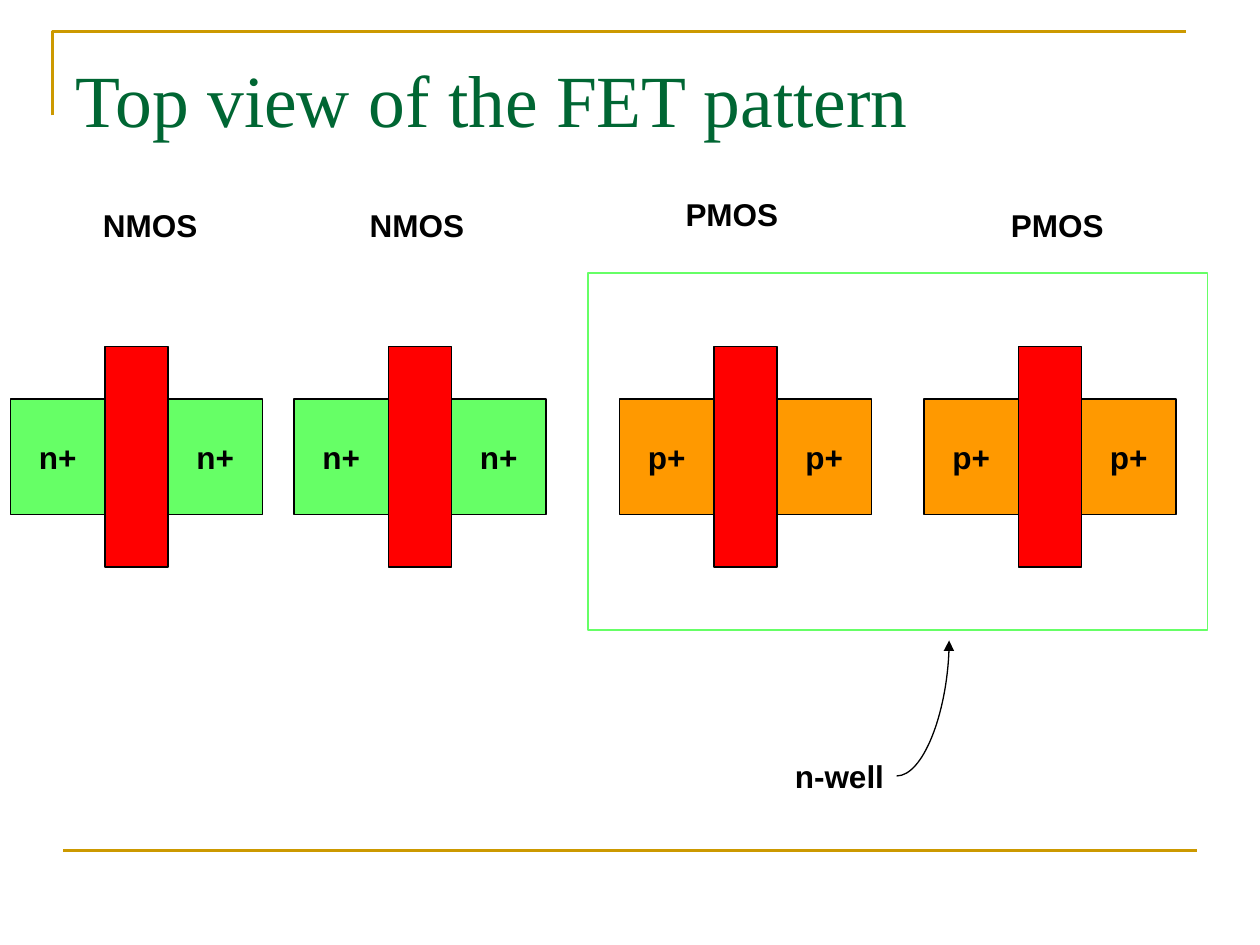
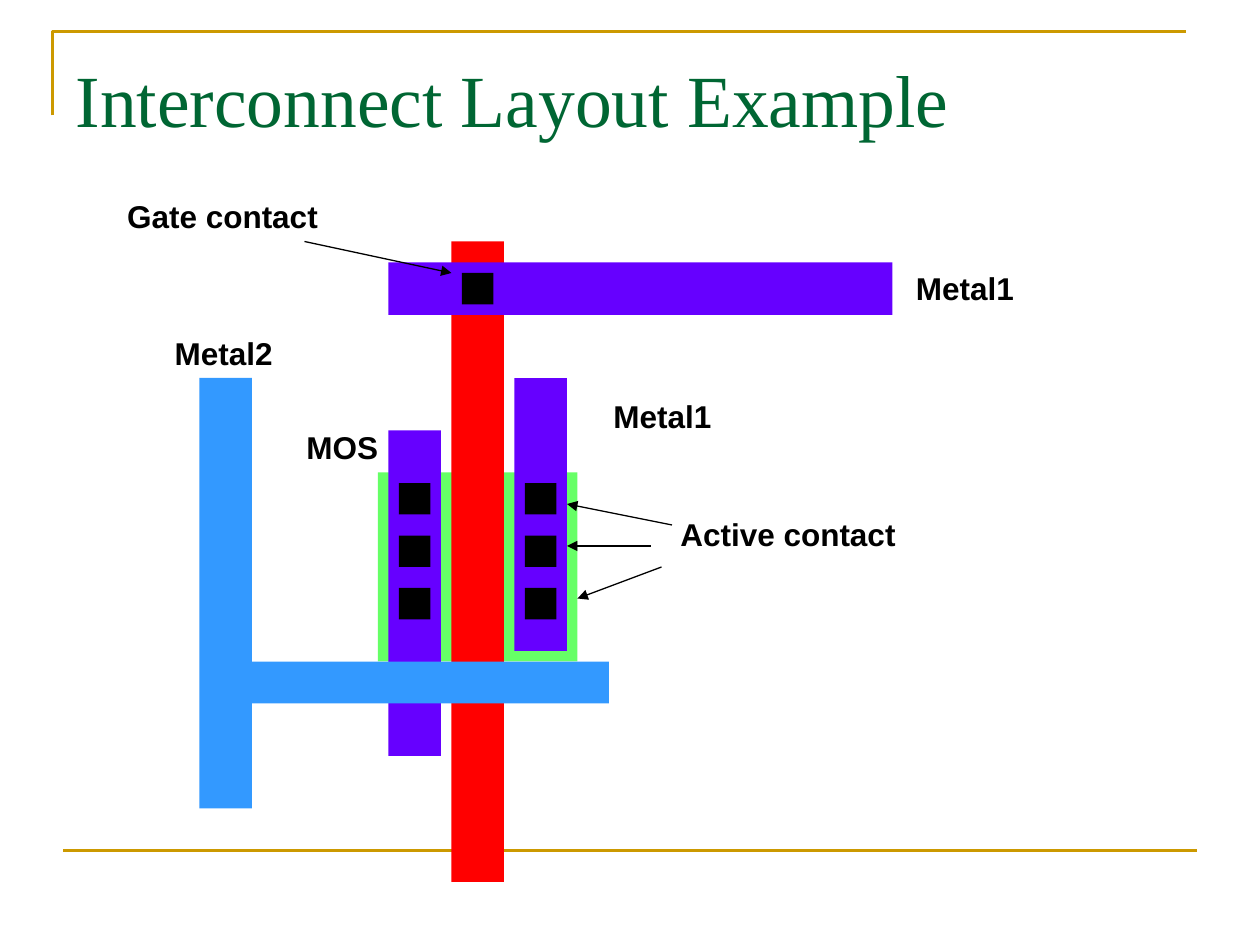
from lxml.etree import SubElement
from pptx import Presentation
from pptx.dml.color import RGBColor
from pptx.enum.shapes import MSO_CONNECTOR as CONN, MSO_SHAPE as SHAPE
from pptx.enum.text import MSO_ANCHOR as ANCHOR, MSO_AUTO_SIZE as AUTO, PP_ALIGN as ALIGN
from pptx.oxml.ns import qn
from pptx.util import Pt

PX = 7620  # EMU in one px, 120 px to the inch

BLACK = RGBColor(0x00, 0x00, 0x00)
GOLD = RGBColor(0xCC, 0x99, 0x00)
TITLE_GREEN = RGBColor(0x00, 0x66, 0x33)
GREEN = RGBColor(0x66, 0xFF, 0x66)
RED = RGBColor(0xFF, 0x00, 0x00)
ORANGE = RGBColor(0xFF, 0x99, 0x00)
VIOLET = RGBColor(0x66, 0x00, 0xFF)
BLUE = RGBColor(0x33, 0x99, 0xFF)

RIGHT_SIDE = 3


def px(*lengths):
    return [n * PX for n in lengths]


class Deck:
    title_font, text_font = "Times New Roman", "Arial"
    title_size, text_size = Pt(42), Pt(18)
    thin, medium = Pt(0.75), Pt(1.5)

    def __init__(self):
        self.prs = Presentation()
        self.prs.slide_width, self.prs.slide_height = px(1200, 900)
        self.s = None

    def new_slide(self, title):
        self.s = self.prs.slides.add_slide(self.prs.slide_layouts[5])
        self.frame()
        self.title(title)

    def frame(self):
        """Draw the gold corner at the top and the gold rule at the bottom."""
        builder = self.s.shapes.build_freeform(50, 110, scale=PX)
        builder.add_line_segments([(50, 30), (1130, 30)], close=False)
        corner = builder.convert_to_shape()
        corner.shadow.inherit = False
        corner.fill.background()
        corner.line.color.rgb = GOLD
        corner.line.width = self.medium
        self.line((60, 810), (1140, 810), GOLD, self.medium)

    def title(self, text):
        sp = self.s.shapes.title
        sp.left, sp.top, sp.width, sp.height = px(60, 36, 1080, 150)
        tf = sp.text_frame
        tf.text = text
        tf.auto_size = AUTO.NONE
        tf.vertical_anchor = ANCHOR.TOP
        tf.margin_top = 15 * PX
        p = tf.paragraphs[0]
        p.alignment = ALIGN.LEFT
        self.style(p, self.title_font, self.title_size, TITLE_GREEN, False)

    def style(self, p, name, size, color, bold):
        for r in p.runs:
            r.font.name, r.font.size, r.font.bold = name, size, bold
            r.font.color.rgb = color

    def set_text(self, sp, text):
        tf = sp.text_frame
        tf.text = text
        tf.word_wrap = False
        p = tf.paragraphs[0]
        p.alignment = ALIGN.CENTER
        self.style(p, self.text_font, self.text_size, BLACK, True)

    def label(self, text, x, y, w):
        sp = self.s.shapes.add_textbox(*px(x, y, w, 48))
        self.set_text(sp, text)
        sp.text_frame.auto_size = AUTO.SHAPE_TO_FIT_TEXT
        return sp

    def rect(self, x, y, w, h, fill=None, line=None, text=None):
        sp = self.s.shapes.add_shape(SHAPE.RECTANGLE, *px(x, y, w, h))
        sp.shadow.inherit = False
        if fill is None:
            sp.fill.background()
        else:
            sp.fill.solid()
            sp.fill.fore_color.rgb = fill
        if line is None:
            sp.line.fill.background()
        else:
            sp.line.color.rgb = line
            sp.line.width = self.thin
        if text:
            self.set_text(sp, text)
            sp.text_frame.vertical_anchor = ANCHOR.MIDDLE
        return sp

    def line(self, start, end, color=BLACK, width=None, kind=CONN.STRAIGHT):
        cx = self.s.shapes.add_connector(kind, *px(*start, *end))
        cx.line.color.rgb = color
        cx.line.width = width or self.thin
        SubElement(cx._element.spPr, qn("a:effectLst"))
        return cx

    def arrow(self, start, end, kind=CONN.STRAIGHT):
        cx = self.line(start, end, kind=kind)
        SubElement(cx._element.spPr.find(qn("a:ln")), qn("a:tailEnd"), type="triangle")
        return cx

    def transistor(self, x, fill, doping):
        """Draw source, gate and drain side by side as one group."""
        source = self.rect(x, 380, 90, 110, fill, BLACK, doping)
        gate = self.rect(x + 90, 330, 60, 210, RED, BLACK)
        drain = self.rect(x + 150, 380, 90, 110, fill, BLACK, doping)
        self.s.shapes.add_group_shape([source, gate, drain])

    def contact(self, x, y):
        return self.rect(x, y, 30, 30, BLACK)

    def contact_column(self, x):
        return [self.contact(x, y) for y in range(460, 561, 50)]


def fet_slide(deck):
    deck.new_slide("Top view of the FET pattern")
    for x in (10, 280):
        deck.transistor(x, GREEN, "n+")
    deck.rect(560, 260, 590, 340, line=GREEN)
    for x in (590, 880):
        deck.transistor(x, ORANGE, "p+")
    for text, x, y in (("NMOS", 86, 190), ("NMOS", 340, 190),
                       ("PMOS", 640, 180), ("PMOS", 950, 190)):
        deck.label(text, x, y, 114)

    well = deck.label("n-well", 745, 715, 109)
    cx = deck.arrow((854, 739), (904, 610), CONN.CURVE)
    cx._element.spPr.find(qn("a:prstGeom")).set("prst", "curvedConnector2")
    cx.begin_connect(well, RIGHT_SIDE)


def interconnect_slide(deck):
    deck.new_slide("Interconnect Layout Example")
    deck.rect(360, 450, 190, 180, GREEN)
    deck.rect(430, 230, 50, 610, RED)
    deck.rect(190, 360, 50, 410, BLUE)
    deck.rect(370, 410, 50, 310, VIOLET)
    deck.contact_column(380)
    deck.rect(240, 630, 340, 40, BLUE)
    metal = deck.rect(490, 360, 50, 260, VIOLET)
    deck.s.shapes.add_group_shape([metal, *deck.contact_column(500)])
    deck.rect(370, 250, 480, 50, VIOLET)
    deck.contact(440, 260)

    for text, x, y, w in (("Metal2", 154, 312, 118), ("Metal1", 860, 250, 118),
                          ("Metal1", 572, 372, 118), ("Active contact", 636, 485, 229),
                          ("Gate contact", 109, 182, 206), ("MOS", 280, 402, 92)):
        deck.label(text, x, y, w)
    for start, end in (((640, 500), (540, 480)), ((620, 520), (540, 520)),
                       ((630, 540), (550, 570)), ((290, 230), (430, 260))):
        deck.arrow(start, end)


def main():
    deck = Deck()
    fet_slide(deck)
    interconnect_slide(deck)
    deck.prs.save("out.pptx")


if __name__ == "__main__":
    main()
